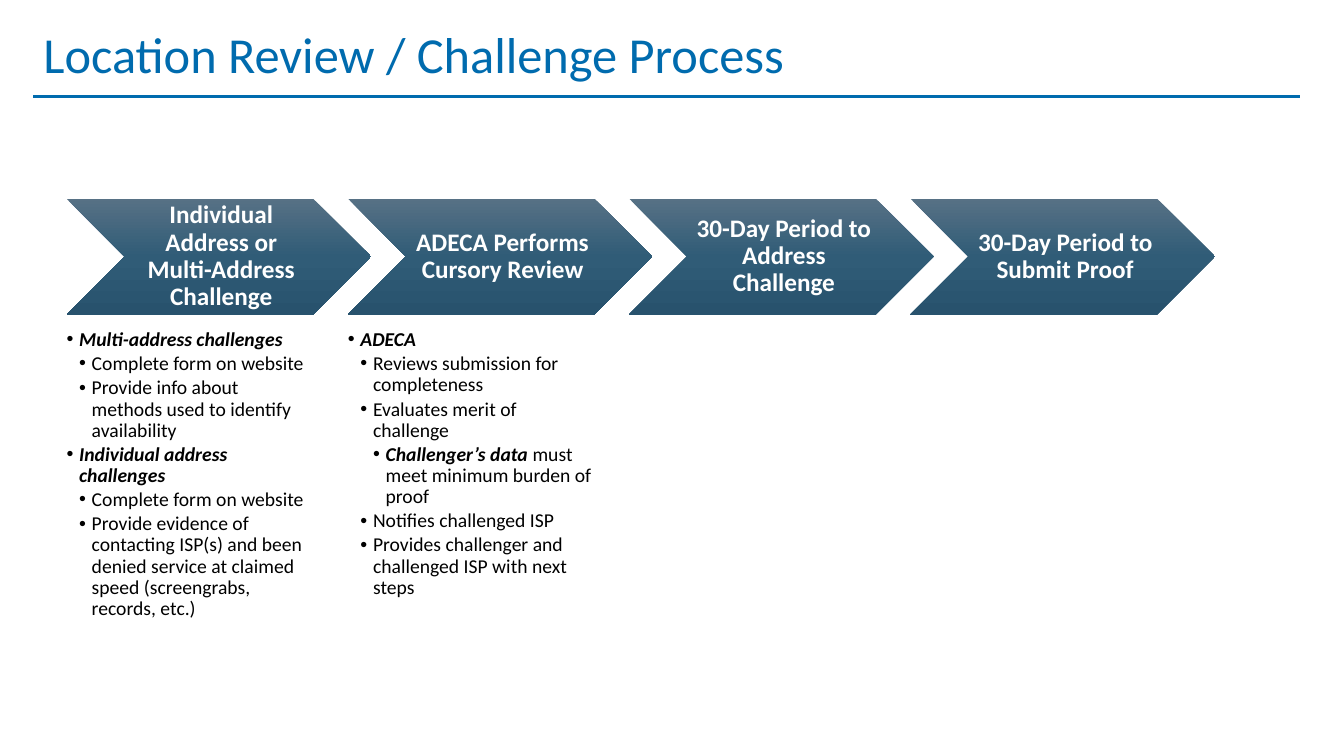
from copy import deepcopy

from lxml.etree import SubElement
from pptx import Presentation
from pptx.dml.color import RGBColor
from pptx.enum.shapes import MSO_CONNECTOR, MSO_SHAPE
from pptx.enum.text import MSO_ANCHOR, MSO_AUTO_SIZE, PP_ALIGN
from pptx.oxml.ns import qn
from pptx.util import Inches, Pt

TITLE = "Location Review / Challenge Process"
STEPS = [
    "Individual Address or Multi-Address Challenge",
    "ADECA Performs Cursory Review",
    "30-Day Period to Address Challenge",
    "30-Day Period to Submit Proof",
]
# One list under each of the first steps: (level, emphasised text, plain text)
DETAILS = [
    [
        (0, "Multi-address challenges", ""),
        (1, "", "Complete form on website"),
        (1, "", "Provide info about methods used to identify availability"),
        (0, "Individual address challenges", ""),
        (1, "", "Complete form on website"),
        (1, "", "Provide evidence of contacting ISP(s) and been denied service "
                "at claimed speed (screengrabs, records, etc.)"),
    ],
    [
        (0, "ADECA", ""),
        (1, "", "Reviews submission for completeness"),
        (1, "", "Evaluates merit of challenge"),
        (2, "Challenger’s data ", "must meet minimum burden of proof"),
        (1, "", "Notifies challenged ISP"),
        (1, "", "Provides challenger and challenged ISP with next steps"),
    ],
]
COLORS = {"title": "006BAE", "step_text": "FFFFFF", "detail": "000000",
          "top": "577185", "middle": "305C77", "bottom": "28526D"}
FONT = "Calibri"
STEP_LEFT, STEP_TOP, STEP_PITCH = 0.66, 1.97, 2.79
STEP_WIDTH, STEP_HEIGHT = 3.02, 1.15
DETAIL_TOP, DETAIL_WIDTH, DETAIL_HEIGHT = 3.27, 2.42, 3.01
INDENT = 0.125


def place(shape, left, top, width, height):
    shape.left, shape.top = Inches(left), Inches(top)
    shape.width, shape.height = Inches(width), Inches(height)


def set_frame(frame, anchor, left, top, right, bottom):
    frame.word_wrap = True
    frame.auto_size = MSO_AUTO_SIZE.NONE
    frame.vertical_anchor = anchor
    frame.margin_left, frame.margin_top = Inches(left), Inches(top)
    frame.margin_right, frame.margin_bottom = Inches(right), Inches(bottom)


def set_paragraph(paragraph, alignment, after=0):
    paragraph.alignment = alignment
    paragraph.line_spacing = 0.9
    paragraph.space_before, paragraph.space_after = Pt(0), Pt(after)


def set_font(run, size, color, bold=False, italic=False):
    font = run.font
    font.name, font.size = FONT, Pt(size)
    font.bold, font.italic = bold, italic
    font.color.rgb = RGBColor.from_string(COLORS[color])


def fill_gradient(shape):
    shape.fill.gradient()
    shape.fill.gradient_angle = 270
    stop_list = shape._element.spPr.find(qn("a:gradFill")).find(qn("a:gsLst"))
    stop_list.insert(1, deepcopy(stop_list[0]))
    names = ("top", "middle", "bottom")
    for index, (stop, name) in enumerate(zip(shape.fill.gradient_stops, names)):
        stop.position = index / 2
        stop.color.rgb = RGBColor.from_string(COLORS[name])


def add_bullet(paragraph, level):
    paragraph.level = level
    properties = paragraph._p.get_or_add_pPr()
    properties.set("marL", str(Inches(INDENT * (level + 1))))
    properties.set("indent", str(-Inches(INDENT)))
    SubElement(properties, qn("a:buChar")).set("char", "•")


def add_title(slide):
    title = slide.shapes.title
    place(title, 0.33, 0.25, 11.5, 1.45)
    set_frame(title.text_frame, MSO_ANCHOR.TOP, 0.1, 0.05, 0.1, 0.05)
    title.text_frame.text = TITLE
    paragraph = title.text_frame.paragraphs[0]
    set_paragraph(paragraph, PP_ALIGN.LEFT)
    set_font(paragraph.runs[0], 36, "title")

    rule = slide.shapes.add_connector(
        MSO_CONNECTOR.STRAIGHT, Inches(0.33), Inches(0.96), Inches(12.89), Inches(0.96))
    rule.line.color.rgb = RGBColor.from_string(COLORS["title"])
    rule.line.width = Pt(2.25)
    SubElement(rule._element.spPr, qn("a:effectLst"))


def add_step(slide, left, text):
    step = slide.shapes.add_shape(
        MSO_SHAPE.CHEVRON, Inches(left), Inches(STEP_TOP),
        Inches(STEP_WIDTH), Inches(STEP_HEIGHT))
    step.shadow.inherit = False
    step.line.fill.background()
    fill_gradient(step)
    set_frame(step.text_frame, MSO_ANCHOR.MIDDLE, 0.08, 0.03, 0.03, 0.03)
    step.text_frame.text = text
    paragraph = step.text_frame.paragraphs[0]
    set_paragraph(paragraph, PP_ALIGN.CENTER)
    set_font(paragraph.runs[0], 18, "step_text", bold=True)


def fill_details(body, left, items):
    place(body, left, DETAIL_TOP, DETAIL_WIDTH, DETAIL_HEIGHT)
    frame = body.text_frame
    set_frame(frame, MSO_ANCHOR.TOP, 0, 0, 0, 0)
    for index, (level, emphasised, plain) in enumerate(items):
        paragraph = frame.add_paragraph() if index else frame.paragraphs[0]
        set_paragraph(paragraph, PP_ALIGN.LEFT, after=2.1)
        add_bullet(paragraph, level)
        for text, strong in ((emphasised, True), (plain, False)):
            if text:
                run = paragraph.add_run()
                run.text = text
                set_font(run, 14, "detail", bold=strong, italic=strong)


def main():
    presentation = Presentation()
    presentation.slide_width, presentation.slide_height = Inches(13.33), Inches(7.5)
    # Title and two list placeholders
    slide = presentation.slides.add_slide(presentation.slide_layouts[3])
    add_title(slide)

    # Process steps, with lists below the first ones
    lefts = [STEP_LEFT + index * STEP_PITCH for index in range(len(STEPS))]
    for left, text in zip(lefts, STEPS):
        add_step(slide, left, text)
    bodies = [slide.placeholders[1], slide.placeholders[2]]
    for body, left, items in zip(bodies, lefts, DETAILS):
        fill_details(body, left, items)

    presentation.save("out.pptx")


if __name__ == "__main__":
    main()
